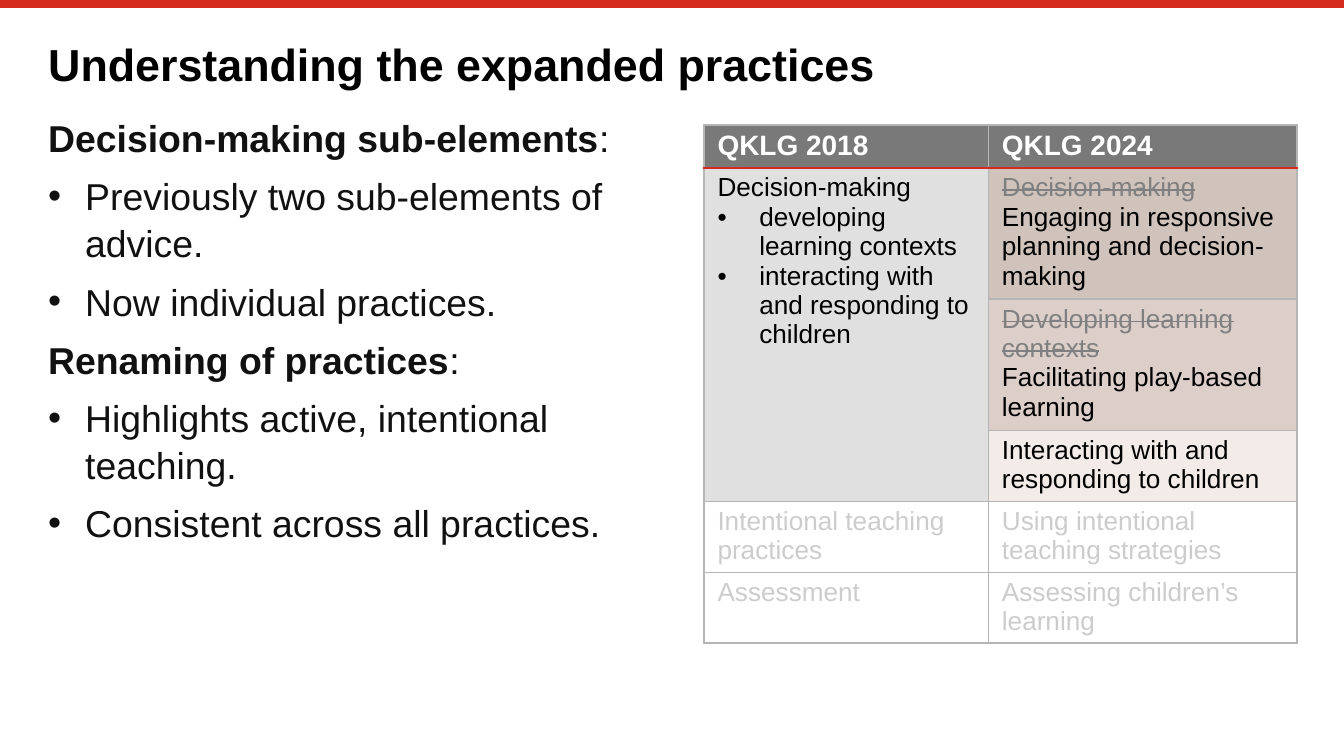
from lxml import etree
from pptx import Presentation
from pptx.dml.color import RGBColor
from pptx.enum.shapes import MSO_CONNECTOR
from pptx.enum.text import MSO_ANCHOR, MSO_AUTO_SIZE, PP_ALIGN
from pptx.oxml.ns import qn
from pptx.util import Cm, Pt

FONT = "Arial"
BLACK = RGBColor(0x00, 0x00, 0x00)
INK = RGBColor(0x11, 0x11, 0x11)
WHITE = RGBColor(0xFF, 0xFF, 0xFF)
RED = RGBColor(0xD5, 0x2B, 0x1E)
HEADER_GREY = RGBColor(0x79, 0x79, 0x79)
BORDER_GREY = RGBColor(0xB5, 0xB5, 0xB5)
STRUCK_GREY = RGBColor(0x80, 0x80, 0x80)
PALE_GREY = RGBColor(0xCC, 0xCC, 0xCC)
BROWN = RGBColor(0x88, 0x69, 0x58)
RUST = RGBColor(0x8E, 0x5D, 0x4F)
SAND = RGBColor(0xC2, 0x9E, 0x87)

ADVICE = [
    ("Decision-making sub-elements", [
        "Previously two sub-elements of advice.",
        "Now individual practices."]),
    ("Renaming of practices", [
        "Highlights active, intentional teaching.",
        "Consistent across all practices."]),
]


def style_run(run, size, color, bold=False, struck=False):
    run.font.name = FONT
    run.font.size = Pt(size)
    run.font.color.rgb = color
    run.font.bold = bold
    if struck:
        run.font._element.set("strike", "sngStrike")


def set_bullet(paragraph, indent=None):
    """Hang a bullet by the indent, or clear the inherited one."""
    properties = paragraph._p.get_or_add_pPr()
    properties.set("marL", str(indent or 0))
    properties.set("indent", str(-(indent or 0)))
    if indent:
        etree.SubElement(properties, qn("a:buFont")).set("typeface", FONT)
        etree.SubElement(properties, qn("a:buChar")).set("char", "•")
    else:
        etree.SubElement(properties, qn("a:buNone"))


def place(placeholder, box, anchor):
    placeholder.left, placeholder.top, placeholder.width, placeholder.height = box
    frame = placeholder.text_frame
    frame.margin_left = frame.margin_top = frame.margin_right = frame.margin_bottom = 0
    frame.word_wrap = True
    frame.auto_size = MSO_AUTO_SIZE.NONE
    frame.vertical_anchor = anchor
    return frame


def add_top_rule(slide, box):
    left, top, width, height = box
    middle = top + height // 2
    rule = slide.shapes.add_connector(
        MSO_CONNECTOR.STRAIGHT, left, middle, left + width, middle)
    rule.line.color.rgb = RED
    rule.line.width = Pt(4.2)
    etree.SubElement(rule._element.spPr, qn("a:effectLst"))


def add_title(slide, box):
    frame = place(slide.shapes.title, box, MSO_ANCHOR.MIDDLE)
    frame.text = "Understanding the expanded practices"
    heading = frame.paragraphs[0]
    heading.alignment = PP_ALIGN.LEFT
    heading.line_spacing = 0.9
    style_run(heading.runs[0], 24, BLACK, bold=True)


def add_advice(slide, box):
    frame = place(slide.placeholders[1], box, MSO_ANCHOR.TOP)
    lines = []
    for topic, points in ADVICE:
        lines += [(topic, True)] + [(point, False) for point in points]
    frame.text = "\n".join(text for text, _ in lines)
    for index, (paragraph, (_, is_topic)) in enumerate(zip(frame.paragraphs, lines)):
        paragraph.line_spacing = 1.05
        paragraph.space_before = Pt(6 if index else 0)
        set_bullet(paragraph, None if is_topic else Cm(0.7))
        style_run(paragraph.runs[0], 20, INK, bold=is_topic)
        if is_topic:
            colon = paragraph.add_run()
            colon.text = ":"
            style_run(colon, 20, INK)


def fill_cell(cell, color=None, opacity=100):
    if color is None:
        cell.fill.background()
        return
    cell.fill.solid()
    cell.fill.fore_color.rgb = color
    if opacity < 100:
        swatch = cell._tc.tcPr.find(".//" + qn("a:srgbClr"))
        etree.SubElement(swatch, qn("a:alpha")).set("val", str(opacity * 1000))


def set_borders(cell, row):
    red_side = {0: "lnB", 1: "lnT"}.get(row)
    for position, side in enumerate(("lnL", "lnR", "lnT", "lnB")):
        color, width = (RED, 1.5) if side == red_side else (BORDER_GREY, 1)
        border = etree.Element(qn("a:" + side), w=str(Pt(width)))
        solid = etree.SubElement(border, qn("a:solidFill"))
        etree.SubElement(solid, qn("a:srgbClr")).set("val", str(color))
        cell._tc.get_or_add_tcPr().insert(position, border)


def write_cell(cell, lines, size, color, bold=False, struck=(), bullets=()):
    cell.margin_left = cell.margin_right = Cm(0.25)
    cell.margin_top = cell.margin_bottom = Cm(0.1)
    cell.text_frame.text = "\n".join(lines)
    for index, paragraph in enumerate(cell.text_frame.paragraphs):
        if index in bullets:
            set_bullet(paragraph, Cm(0.79))
        is_struck = index in struck
        style_run(paragraph.runs[0], size, STRUCK_GREY if is_struck else color,
                  bold, is_struck)


def add_comparison(slide, box):
    left, top, width, height = box
    table = slide.shapes.add_table(6, 2, left, top, width, height).table
    table.first_row = table.horz_banding = False
    first_width = int(width * 0.48)
    table.columns[0].width = first_width
    table.columns[1].width = width - first_width
    for row, row_height in zip(table.rows, (0.81, 2.48, 2.48, 1.34, 1.34, 1.34)):
        row.height = Cm(row_height)

    # Fills and borders
    fills = {
        (0, 0): (HEADER_GREY,), (0, 1): (HEADER_GREY,),
        (1, 0): (PALE_GREY, 60), (1, 1): (BROWN, 40),
        (2, 1): (RUST, 30), (3, 1): (SAND, 20),
    }
    for row in range(6):
        for column in range(2):
            cell = table.cell(row, column)
            fill_cell(cell, *fills.get((row, column), ()))
            set_borders(cell, row)
    table.cell(1, 0).merge(table.cell(3, 0))

    # Header row
    for column, edition in enumerate(("QKLG 2018", "QKLG 2024")):
        write_cell(table.cell(0, column), [edition], 15, WHITE, bold=True)

    # Decision-making and the practices that replace it
    write_cell(table.cell(1, 0), [
        "Decision-making", "developing learning contexts",
        "interacting with and responding to children"], 14, BLACK, bullets=(1, 2))
    write_cell(table.cell(1, 1), [
        "Decision-making", "Engaging in responsive planning and decision-making"],
        14, BLACK, struck=(0,))
    write_cell(table.cell(2, 1), [
        "Developing learning contexts", "Facilitating play-based learning"],
        14, BLACK, struck=(0,))
    write_cell(table.cell(3, 1), ["Interacting with and responding to children"],
               14, BLACK)

    # Practices outside the present focus
    faded = [("Intentional teaching practices", "Using intentional teaching strategies"),
             ("Assessment", "Assessing children’s learning")]
    for row, practices in enumerate(faded, start=4):
        for column, practice in enumerate(practices):
            write_cell(table.cell(row, column), [practice], 14, PALE_GREY)


def main():
    deck = Presentation()
    deck.slide_width, deck.slide_height = Cm(25.4), Cm(14.28)
    slide = deck.slides.add_slide(deck.slide_layouts[1])
    add_top_rule(slide, (0, 0, deck.slide_width, Cm(0.15)))
    add_title(slide, (Cm(0.91), Cm(0.76), Cm(23.6), Cm(0.99)))
    add_advice(slide, (Cm(0.91), Cm(2.13), Cm(11.58), Cm(10.31)))
    add_comparison(slide, (Cm(13.31), Cm(2.36), Cm(11.2), Cm(9.79)))
    deck.save("out.pptx")


if __name__ == "__main__":
    main()
